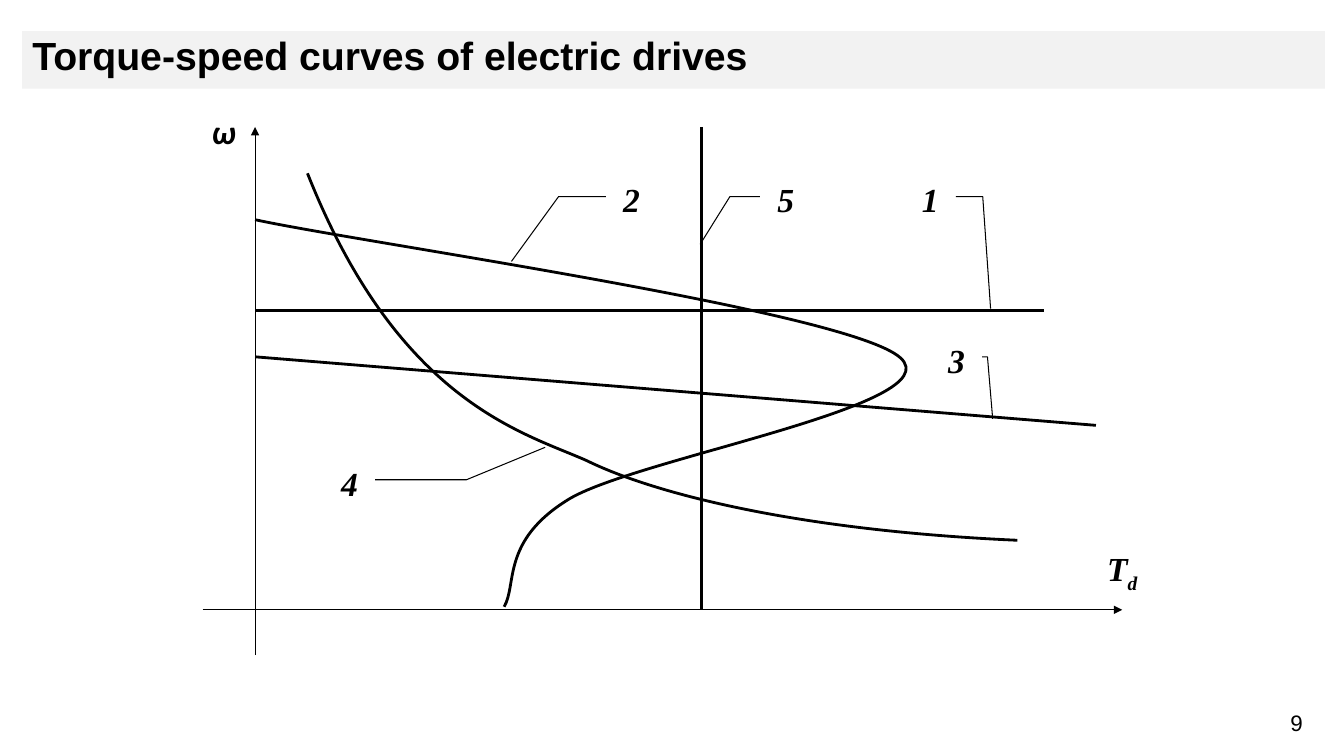
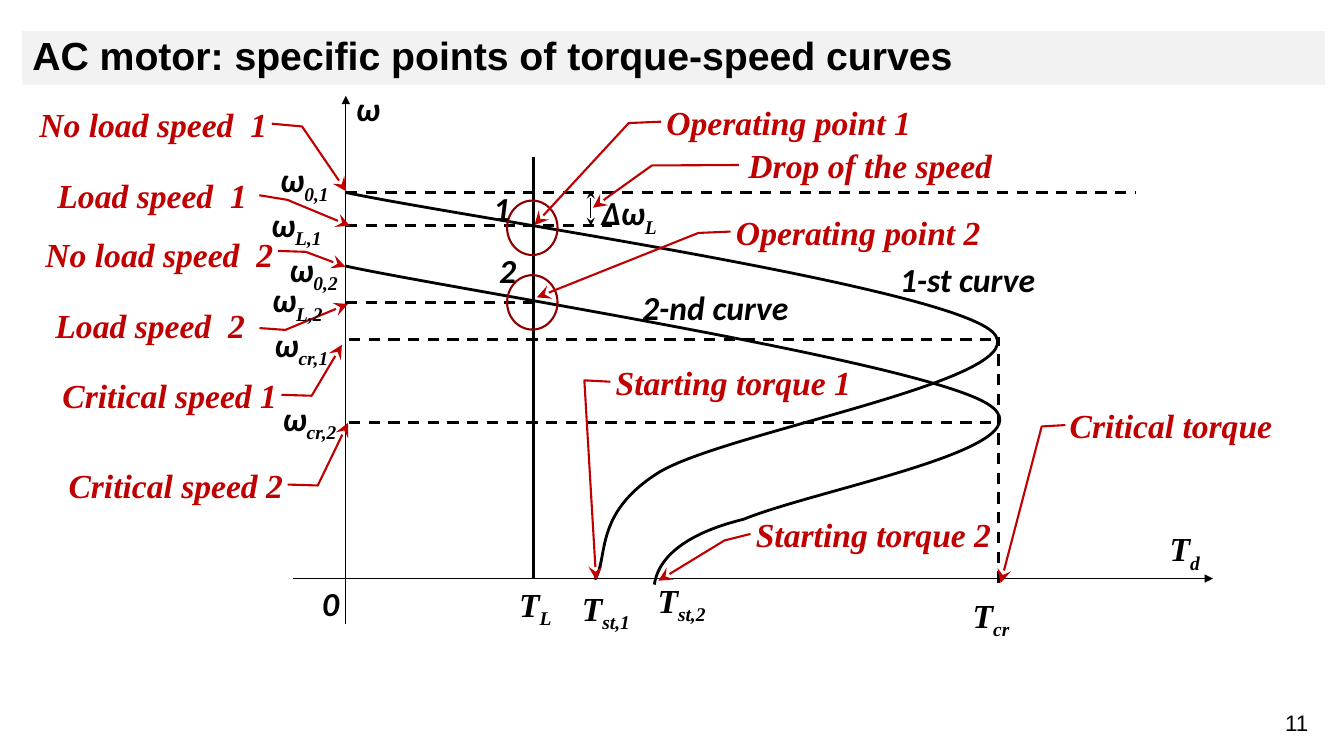
"""Build two slides on torque-speed curves of electric drives."""
from lxml import etree
from pptx import Presentation
from pptx.dml.color import RGBColor
from pptx.enum import dml, shapes, text
from pptx.oxml.ns import qn
from pptx.util import Inches, Pt

COLORS = {"ink": "000000", "band": "F2F2F2", "note": "C00000", "ring": "8E0000"}
SANS, SERIF, SYMBOL = "Arial", "Times New Roman", "Calibri"
LEFT, CENTER, RIGHT = text.PP_ALIGN.LEFT, text.PP_ALIGN.CENTER, text.PP_ALIGN.RIGHT


def rgb(name):
    """Return the named colour."""
    return RGBColor.from_string(COLORS[name])


def style_font(font, name, size, color="ink", bold=True, italic=True):
    """Format one font."""
    font.name, font.size, font.bold, font.italic = name, Pt(size), bold, italic
    font.color.rgb = rgb(color)


def style_line(sp, width, color="ink", head=None, tail=None, size="med"):
    """Format an outline and its arrowheads."""
    sp.line.color.rgb = rgb(color)
    sp.line.width = Pt(width)
    ln = sp.line._get_or_add_ln()
    for tag, kind in (("a:headEnd", head), ("a:tailEnd", tail)):
        if kind:
            etree.SubElement(ln, qn(tag), {"type": kind, "w": size, "len": size})


def write_label(sp, parts, color="ink", align=CENTER, gap=0):
    """Write (text, font) parts in a shape, lowering every part after the first."""
    tf = sp.text_frame
    tf.word_wrap = True
    tf.vertical_anchor = text.MSO_ANCHOR.TOP
    tf.margin_left = tf.margin_top = tf.margin_bottom = 0
    tf.margin_right = Inches(gap)
    p = tf.paragraphs[0]
    p.alignment, p.line_spacing, p.space_after = align, 1.15, Pt(10)
    for i, (words, font) in enumerate(parts):
        r = p.add_run()
        r.text = words
        style_font(r.font, font, 24, color)
        if i:
            r._r.get_or_add_rPr().set("baseline", "-25000")


def add_label(s, x, y, base, sub="", w=1.04):
    """Add a symbol with an optional subscript."""
    sp = s.shapes.add_textbox(Inches(x), Inches(y), Inches(w), Inches(0.68))
    parts = [(base, SERIF if base == "T" else SYMBOL)]
    if sub:
        parts.append((sub, SERIF))
    write_label(sp, parts)


def add_line(s, x1, y1, x2, y2, width=2, dashed=False, head=None, tail=None):
    """Add a straight line."""
    c = s.shapes.add_connector(shapes.MSO_CONNECTOR.STRAIGHT, Inches(x1),
                               Inches(y1), Inches(x2), Inches(y2))
    if dashed:
        c.line.dash_style = dml.MSO_LINE.DASH
    style_line(c, width, head=head, tail=tail)
    etree.SubElement(c._element.spPr, qn("a:effectLst"))


def add_axes(s, x, y):
    """Add the speed and torque axes that cross at x, y."""
    add_line(s, x, y + 0.45, x, y - 4.79, 0.75, tail="triangle")
    add_line(s, x - 0.52, y, x + 8.6, y, 0.75, tail="triangle")


def add_curve(s, *points):
    """Add a smooth curve: a start, then three control points per cubic segment."""
    start, *controls = [(Inches(x), Inches(y)) for x, y in points]
    fb = s.shapes.build_freeform(*start)
    fb.add_line_segments(controls, close=False)
    sp = fb.convert_to_shape()
    sp.shadow.inherit = False
    sp.fill.background()
    style_line(sp, 2)
    outline = sp._element.find(".//" + qn("a:path"))
    steps = outline.findall(qn("a:lnTo"))
    for i in range(0, len(steps), 3):
        cubic = etree.SubElement(outline, qn("a:cubicBezTo"))
        for step in steps[i:i + 3]:
            cubic.append(step[0])
            outline.remove(step)


def add_callout(s, words, x, y, w, leader, align=LEFT, flip=False, gap=0, note=True):
    """Add a label with a bent leader given as y, x fractions of its box."""
    sp = s.shapes.add_shape(shapes.MSO_SHAPE.LINE_CALLOUT_2_NO_BORDER,
                            Inches(x), Inches(y), Inches(w), Inches(0.46))
    for i, value in enumerate(leader):
        sp.adjustments[i] = value
    if flip:
        sp._element.spPr.find(qn("a:xfrm")).set("flipH", "1")
    sp.shadow.inherit = False
    sp.fill.background()
    color = "note" if note else "ink"
    if note:
        style_line(sp, 1.5, color, tail="stealth", size="lg")
    else:
        style_line(sp, 0.75, color)
    write_label(sp, [(words, SERIF)], color, align, gap)


def add_ring(s, x, y):
    """Circle an operating point centred at x, y."""
    sp = s.shapes.add_shape(shapes.MSO_SHAPE.OVAL, Inches(x - 0.25),
                            Inches(y - 0.27), Inches(0.5), Inches(0.54))
    sp.shadow.inherit = False
    sp.fill.background()
    style_line(sp, 1.5, "ring")


def new_slide(prs, title, number, band_height):
    """Add a slide with its title band and page number."""
    s = prs.slides.add_slide(prs.slide_layouts[5])
    sp = s.shapes.title
    sp.left, sp.top, sp.width, sp.height = map(Inches, (0.22, 0.31, 12.92, band_height))
    sp.fill.solid()
    sp.fill.fore_color.rgb = rgb("band")
    tf = sp.text_frame
    tf.text = title
    tf.auto_size = text.MSO_AUTO_SIZE.NONE
    tf.vertical_anchor = text.MSO_ANCHOR.TOP
    p = tf.paragraphs[0]
    p.alignment, p.line_spacing = LEFT, 0.9
    style_font(p.runs[0].font, SANS, 28, italic=False)

    sp = s.shapes.add_textbox(Inches(12.54), Inches(6.99), Inches(0.64), Inches(0.37))
    tf = sp.text_frame
    tf.word_wrap = True
    tf.text = number
    p = tf.paragraphs[0]
    p.alignment = CENTER
    style_font(p.runs[0].font, SANS, 16, bold=False, italic=False)
    return s


def build_drives(prs):
    """Build the slide that compares drive curves."""
    s = new_slide(prs, "Torque-speed curves of electric drives", "9", 0.57)
    add_axes(s, 2.53, 6.05)
    add_line(s, 2.53, 3.08, 10.35, 3.08)
    add_line(s, 2.53, 3.54, 10.87, 4.22)
    add_line(s, 6.96, 1.26, 6.96, 6.05)
    add_curve(s, (3.05, 1.72), (3.95, 3.99), (5.19, 4.29), (5.82, 4.57),
              (6.45, 4.88), (7.84, 5.26), (10.09, 5.36))
    add_curve(s, (2.53, 2.18), (3.59, 2.41), (8.42, 3.09), (8.93, 3.55),
              (9.45, 4.02), (6.28, 4.55), (5.63, 4.96),
              (4.97, 5.37), (5.13, 5.8), (5, 6.02))
    for words, x, y, w, align, leader in (
        ("2", 6.18, 1.72, 0.78, LEFT, (0.5, -0.22, 0.5, -0.82, 1.9, -1.42)),
        ("1", 8.79, 1.72, 0.52, RIGHT, (0.5, 1.33, 0.5, 1.84, 2.92, 1.99)),
        ("3", 9.05, 3.31, 0.52, RIGHT, (0.5, 1.33, 0.5, 1.43, 1.84, 1.53)),
        ("4", 3.03, 4.53, 0.52, RIGHT, (0.5, 1.33, 0.5, 3.07, -0.2, 4.57)),
        ("5", 7.71, 1.72, 0.87, LEFT, (0.5, -0.2, 0.5, -0.54, 1.53, -0.88)),
    ):
        add_callout(s, words, x, y, w, leader, align, note=False)
    add_label(s, 1.7, 1.04, "ω")
    add_label(s, 10.61, 5.37, "T", "d")


def build_motor(prs):
    """Build the slide on the specific points of an AC motor."""
    s = new_slide(prs, "AC motor: specific points of torque-speed curves", "11", 0.53)
    add_axes(s, 3.43, 5.74)
    add_line(s, 5.29, 5.74, 5.29, 1.56)
    for x1, x2, y in ((3.43, 11.26, 1.91), (3.43, 6.07, 2.24), (3.43, 5.28, 3),
                      (3.46, 9.88, 3.37), (3.46, 9.88, 4.19)):
        add_line(s, x1, y, x2, y, dashed=True)
    add_line(s, 9.9, 5.78, 9.9, 3.34, dashed=True)
    add_line(s, 5.86, 2.24, 5.86, 1.89, 0.5, head="stealth", tail="stealth")
    add_curve(s, (3.43, 1.91), (4.5, 2.14), (9.32, 2.83), (9.84, 3.29),
              (10.35, 3.75), (7.19, 4.28), (6.53, 4.69),
              (5.88, 5.1), (6.04, 5.53), (5.9, 5.75))
    add_curve(s, (3.43, 2.64), (4.49, 2.87), (9.14, 3.59), (9.8, 4.01),
              (10.46, 4.43), (8.15, 4.84), (7.38, 5.15),
              (7.28, 5.18), (6.56, 5.33), (6.49, 5.8))
    for y in (2.26, 3):
        add_ring(s, 5.28, y)

    for words, x, y, w, gap, leader in (
        ("No load speed  1", 0.34, 0.97, 2.31, 0, (0.56, -0.02, 0.62, -0.15, 2.02, -0.34)),
        ("Load speed  1", 0.39, 1.68, 2.14, 0.08, (0.56, -0.02, 0.66, -0.15, 1.22, -0.44)),
        ("No load speed  2", 0.4, 2.26, 2.31, 0, (0.5, -0.02, 0.52, -0.14, 0.84, -0.31)),
        ("Load speed  2", 0.37, 2.97, 2.14, 0.08, (0.62, -0.03, 0.66, -0.15, 0.1, -0.44)),
        ("Critical speed 1", 0.61, 3.66, 2.14, 0, (0.56, -0.02, 0.58, -0.16, -0.52, -0.3)),
        ("Critical speed 2", 0.67, 4.55, 2.14, 0, (0.56, -0.02, 0.58, -0.16, -0.77, -0.3)),
    ):
        add_callout(s, words, x, y, w, leader, RIGHT, flip=True, gap=gap)
    for words, x, y, w, align, gap, leader in (
        ("Operating point 1", 6.61, 0.95, 2.67, LEFT, 0, (0.56, -0.02, 0.59, -0.14, 2.79, -0.49)),
        ("Drop of the speed", 7.38, 1.38, 2.54, RIGHT, 0.08,
         (0.56, -0.02, 0.57, -0.36, 1.48, -0.59)),
        ("Operating point 2", 7.3, 2.04, 2.67, LEFT, 0, (0.56, -0.02, 0.59, -0.14, 1.98, -0.74)),
        ("Starting torque 1", 6.1, 3.53, 2.34, RIGHT, 0, (0.56, -0.02, 0.53, -0.13, 4.84, -0.08)),
        ("Critical torque", 10.61, 3.96, 2.14, LEFT, 0, (0.56, -0.02, 0.59, -0.13, 3.97, -0.32)),
        ("Starting torque 2", 7.49, 5.04, 2.34, RIGHT, 0, (0.56, -0.02, 0.7, -0.13, 1.57, -0.41)),
    ):
        add_callout(s, words, x, y, w, leader, align, gap=gap)

    for x, y, base, sub in (
        (3.13, 0.81, "ω", ""), (2.5, 1.51, "ω", "0,1"), (2.42, 1.95, "ω", "L,1"),
        (2.59, 2.4, "ω", "0,2"), (2.43, 2.7, "ω", "L,2"), (2.47, 3.14, "ω", "cr,1"),
        (2.55, 3.88, "ω", "cr,2"), (5.72, 1.84, "Δω", "L"), (2.76, 5.72, "0", ""),
        (4.79, 5.72, "T", "L"), (5.49, 5.76, "T", "st,1"), (6.24, 5.68, "T", "st,2"),
        (9.31, 5.83, "T", "cr"), (11.23, 5.17, "T", "d"),
    ):
        add_label(s, x, y, base, sub)
    add_label(s, 4.7, 1.8, "1", w=0.55)
    add_label(s, 4.76, 2.42, "2", w=0.55)
    add_label(s, 8.07, 2.51, "1-st curve", w=3.05)
    add_label(s, 5.57, 2.79, "2-nd curve", w=3.05)


def main():
    """Build and save the presentation."""
    prs = Presentation()
    prs.slide_width, prs.slide_height = Inches(13.33), Inches(7.5)
    build_drives(prs)
    build_motor(prs)
    prs.save("out.pptx")


if __name__ == "__main__":
    main()
